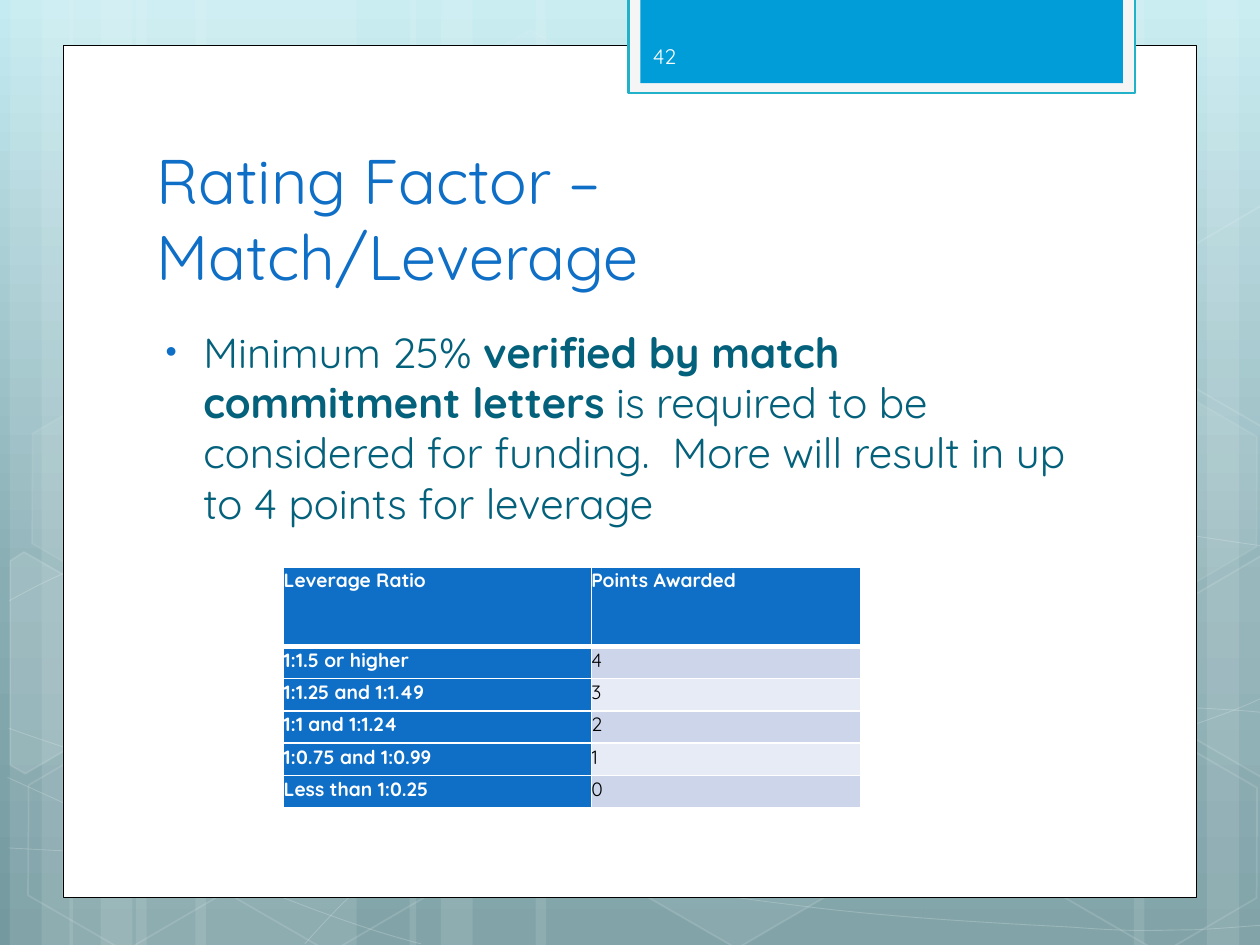
import math

from lxml import etree
from pptx import Presentation
from pptx import util as u
from pptx.dml.color import RGBColor
from pptx.enum import shapes, text
from pptx.oxml.ns import qn

Cm = u.Cm
FONT = "Quicksand"
COLORS = {
    "white": "FFFFFF", "black": "000000", "blue": "0F6FC6", "teal": "04617B",
    "frame": "F5F5F5", "frame_line": "21B2C9", "tab": "009DD9", "number": "FEFEFE",
    "band_dark": "CCD5EA", "band_light": "E7EBF5",
}
BACKGROUND_STOPS = [(0, "C4EBF1"), (62, "88ADB3"), (100, "749AA0")]

# Left edge and width of each vertical stripe, in cm
STRIPES = [
    (2.74, 4.45), (0.2, 1.27), (0.84, 2.12), (3.94, 4.45), (1.4, 1.27), (2.03, 2.12),
    (18.62, 4.45), (24.33, 1.27), (22.86, 2.12), (10.8, 7.82), (8.26, 1.27), (8.89, 2.12),
]
# Curves in tenths of the slide width: a start, then pieces of
# three points (two handles and an end) or of one point (a straight line)
CURVES = [
    [[(0.07, 6.73)], [(0.61, 6.76), (1.15, 6.79), (1.9, 6.78)],
     [(2.65, 6.77), (3.58, 6.75), (4.58, 6.65)], [(5.58, 6.55), (7, 6.36), (7.92, 6.17)],
     [(8.83, 5.98), (9.77, 5.68), (10.07, 5.51)]],
    [[(0.07, 4.77)], [(0.36, 4.61), (0.65, 4.46), (1.21, 4.31)],
     [(1.78, 4.16), (2.59, 3.94), (3.47, 3.87)], [(4.36, 3.8), (5.44, 3.79), (6.54, 3.87)],
     [(7.64, 3.95), (9.47, 4.26), (10.07, 4.34)]],
    [[(0.06, 6.17)], [(1.27, 6.72), (2.47, 7.27), (3.34, 7.49)]],
    [[(0.07, 5.78)], [(0.38, 5.89), (0.7, 6), (1.28, 6.16)],
     [(1.86, 6.31), (2.73, 6.56), (3.57, 6.73)], [(4.4, 6.9), (5.45, 7.08), (6.28, 7.18)],
     [(7.11, 7.29), (8, 7.33), (8.53, 7.36)], [(9.05, 7.4), (9.19, 7.38), (9.45, 7.38)],
     [(9.71, 7.37), (9.89, 7.35), (10.07, 7.34)]],
    [[(2.42, 7.49)], [(2.6, 7.29), (2.78, 7.09), (3.02, 6.91)],
     [(3.26, 6.73), (3.6, 6.53), (3.88, 6.39)], [(4.16, 6.25), (4.33, 6.19), (4.7, 6.09)],
     [(5.06, 5.99), (5.73, 5.85), (6.08, 5.78)], [(6.44, 5.71), (6.49, 5.71), (6.8, 5.69)],
     [(7.11, 5.66), (7.6, 5.63), (7.94, 5.62)], [(8.29, 5.61), (8.86, 5.62), (8.86, 5.62)],
     [(9.53, 5.62)], [(9.71, 5.63), (9.88, 5.64), (9.97, 5.65)],
     [(10.06, 5.66), (10.03, 5.65), (10.06, 5.66)]],
]
HEXAGON_TILT = 30
# Left, top (cm), fill opacity, line opacity (percent)
HEXAGONS = [
    (8.48, 0.91, 4, 8), (12.62, 14.96, 6, 12), (0.28, 15.01, 0, 12), (0.36, 7.92, 7, 8),
    (4.42, 15.04, 0, 12), (19.13, 11.51, 10, 12), (21.18, 15.06, 0, 12), (21.18, 7.98, 7, 8),
]
# Hexagons cut by the slide edge: centre and outline in tenths of the slide width, fill opacity
CUT_HEXAGONS = [
    ((0.36, 5.35), [(0.08, 4.45), (0.19, 4.38), (0.96, 4.82), (0.95, 5.7), (0.2, 6.14),
                    (0.08, 6.07)], 10),
    ((9.85, 5.2), [(9.26, 4.85), (10.01, 4.41), (10.09, 4.46), (10.09, 6.13), (10.02, 6.17),
                   (9.26, 5.73)], 4),
    ((9.85, 2.41), [(9.26, 2.07), (10.01, 1.63), (10.1, 1.68), (10.09, 3.35), (10.02, 3.39),
                    (9.26, 2.95)], 0),
]
TABLE_ROWS = [
    ("Leverage Ratio", "Points Awarded"), ("1:1.5 or higher", "4"), ("1:1.25 and 1:1.49", "3"),
    ("1:1 and 1:1.24", "2"), ("1:0.75 and 1:0.99", "1"), ("Less than 1:0.25", "0"),
]


def rgb(name):
    return RGBColor.from_string(COLORS[name])


def set_opacity(shape, route, percent):
    if percent < 100:
        color = shape.element.spPr.find("/".join(qn(tag) for tag in route))
        etree.SubElement(color, qn("a:alpha"), val=str(percent * 1000))


def paint(shape, fill=None, line=None, width=1, fill_opacity=100, line_opacity=100):
    shape.shadow.inherit = False
    if fill and fill_opacity:
        shape.fill.solid()
        shape.fill.fore_color.rgb = rgb(fill)
        set_opacity(shape, ["a:solidFill", "a:srgbClr"], fill_opacity)
    else:
        shape.fill.background()
    if line:
        shape.line.color.rgb = rgb(line)
        shape.line.width = u.Pt(width)
        set_opacity(shape, ["a:ln", "a:solidFill", "a:srgbClr"], line_opacity)
    else:
        shape.line.fill.background()


def add_block(slide, box, kind=shapes.MSO_SHAPE.RECTANGLE, **style):
    shape = slide.shapes.add_shape(kind, *box)
    paint(shape, **style)
    return shape


def add_outline(slide, points, unit, close, **style):
    start, *others = [(round(x * 1000), round(y * 1000)) for x, y in points]
    builder = slide.shapes.build_freeform(*start, scale=unit / 1000)
    builder.add_line_segments(others, close=close)
    shape = builder.convert_to_shape()
    paint(shape, **style)
    return shape


def add_curve(slide, pieces, unit, **style):
    shape = add_outline(slide, sum(pieces, []), unit, False, **style)
    lines = iter(shape.element.findall(".//" + qn("a:lnTo")))
    for piece in pieces[1:]:
        group = [next(lines) for _ in piece]
        if len(group) == 3:
            bezier = etree.Element(qn("a:cubicBezTo"))
            group[0].addprevious(bezier)
            for line in group:
                bezier.append(line[0])
                line.getparent().remove(line)


def turn(point, center, degrees):
    x, y = point[0] - center[0], point[1] - center[1]
    cosine, sine = math.cos(math.radians(degrees)), math.sin(math.radians(degrees))
    return center[0] + x * cosine - y * sine, center[1] + x * sine + y * cosine


def write(paragraph, content, size=12, color="black", bold=False):
    run = paragraph.add_run()
    run.text = content
    run.font.name = FONT
    run.font.size = u.Pt(size)
    run.font.bold = bold
    run.font.color.rgb = rgb(color)


def add_text_frame(slide, box, anchor=text.MSO_ANCHOR.TOP):
    frame = slide.shapes.add_textbox(*box).text_frame
    frame.word_wrap = True
    frame.vertical_anchor = anchor
    return frame


def add_backdrop(slide, width, height):
    # Gradient
    fill = slide.background.fill
    fill.gradient()
    fill.gradient_angle = 270
    stops = slide.element.find(".//" + qn("a:gsLst"))
    for stop in list(stops):
        stops.remove(stop)
    for position, color in BACKGROUND_STOPS:
        stop = etree.SubElement(stops, qn("a:gs"), pos=str(position * 1000))
        etree.SubElement(stop, qn("a:srgbClr"), val=color)
    # Stripes, curves and hexagons
    for left, stripe_width in STRIPES:
        add_block(slide, (Cm(left), 0, Cm(stripe_width), height), fill="white", fill_opacity=10)
    unit = width / 10
    for pieces in CURVES:
        add_curve(slide, pieces, unit, line="white", width=0.5, line_opacity=20)
    for left, top, fill_opacity, line_opacity in HEXAGONS:
        hexagon = add_block(
            slide, (Cm(left), Cm(top), Cm(4.45), Cm(3.86)), shapes.MSO_SHAPE.HEXAGON,
            fill="white", line="white", fill_opacity=fill_opacity, line_opacity=line_opacity)
        hexagon.adjustments[0] = 0.285
        hexagon.rotation = HEXAGON_TILT
    for center, points, fill_opacity in CUT_HEXAGONS:
        level = [turn(point, center, -HEXAGON_TILT) for point in points]
        add_outline(slide, level, unit, True, fill="white", line="white",
                    fill_opacity=fill_opacity, line_opacity=12).rotation = HEXAGON_TILT


def add_number_tab(slide, left, top, width, height):
    add_block(slide, (left, top, width, height), fill="frame", line="frame_line", width=1.25)
    margin = Cm(0.24)
    add_block(slide, (left + margin, top, width - 2 * margin, height - Cm(0.2)), fill="tab")
    frame = add_text_frame(slide, (left + margin, top + Cm(0.67), Cm(3.71), Cm(1.02)),
                           text.MSO_ANCHOR.MIDDLE)
    write(frame.paragraphs[0], "42", size=12, color="number")


def add_title(slide, *box):
    frame = add_text_frame(slide, box, text.MSO_ANCHOR.BOTTOM)
    frame.margin_right = Cm(0.8)
    write(frame.paragraphs[0], "Rating Factor – Match/Leverage", size=36, color="blue")


def add_body(slide, *box):
    paragraph = add_text_frame(slide, box).paragraphs[0]
    paragraph.space_before = u.Pt(4.8)
    for content, bold in [
        ("Minimum 25% ", False), ("verified by match commitment letters", True),
        (" is required to be considered for funding.  More will result in "
         "up to 4 points for leverage", False),
    ]:
        write(paragraph, content, size=24, color="teal", bold=bold)
    # Bullet
    properties = paragraph._p.get_or_add_pPr()
    properties.set("marL", str(Cm(0.95)))
    properties.set("indent", str(-Cm(0.76)))
    bullet_color = etree.SubElement(properties, qn("a:buClr"))
    etree.SubElement(bullet_color, qn("a:srgbClr"), val=COLORS["blue"])
    etree.SubElement(properties, qn("a:buSzPct"), val="76000")
    etree.SubElement(properties, qn("a:buFont"), typeface="Arial")
    etree.SubElement(properties, qn("a:buChar"), char="•")


def set_borders(cell, bottom):
    properties = cell._tc.get_or_add_tcPr()
    for index, (side, width) in enumerate([("L", 1), ("R", 1), ("T", 1), ("B", bottom)]):
        line = etree.Element(qn("a:ln" + side), w=str(u.Pt(width)))
        fill = etree.SubElement(line, qn("a:solidFill"))
        etree.SubElement(fill, qn("a:srgbClr"), val=COLORS["white"])
        properties.insert(index, line)


def add_points_table(slide, left, top, column_widths, header_height, row_height):
    height = header_height + row_height * (len(TABLE_ROWS) - 1)
    table = slide.shapes.add_table(
        len(TABLE_ROWS), len(column_widths), left, top, sum(column_widths), height).table
    for column, width in zip(table.columns, column_widths):
        column.width = width
    for row_index, values in enumerate(TABLE_ROWS):
        table.rows[row_index].height = row_height if row_index else header_height
        for column_index, value in enumerate(values):
            cell = table.cell(row_index, column_index)
            cell.margin_left = cell.margin_right = cell.margin_top = cell.margin_bottom = 0
            heading = row_index == 0 or column_index == 0
            band = "band_dark" if row_index % 2 else "band_light"
            cell.fill.solid()
            cell.fill.fore_color.rgb = rgb("blue" if heading else band)
            set_borders(cell, bottom=1 if row_index else 3)
            paragraph = cell.text_frame.paragraphs[0]
            paragraph.line_spacing = 1.07
            paragraph.space_after = u.Pt(6)
            write(paragraph, value, size=11, color="white" if heading else "black", bold=heading)


def main():
    presentation = Presentation()
    presentation.slide_width, presentation.slide_height = Cm(25.4), Cm(19.05)
    slide = presentation.slides.add_slide(presentation.slide_layouts[6])
    add_backdrop(slide, presentation.slide_width, presentation.slide_height)
    add_block(slide, (Cm(1.27), Cm(0.91), Cm(22.86), Cm(17.19)),
              fill="white", line="black", width=0.5)
    add_number_tab(slide, Cm(12.67), Cm(-0.05), Cm(10.21), Cm(1.93))
    add_title(slide, Cm(2.9), Cm(2.85), Cm(19.51), Cm(3.18))
    add_body(slide, Cm(2.9), Cm(6.45), Cm(18.82), Cm(9.75))
    add_points_table(slide, Cm(5.72), Cm(11.43), (Cm(6.2), Cm(5.44)), Cm(1.6), Cm(0.65))
    presentation.save("out.pptx")


if __name__ == "__main__":
    main()
